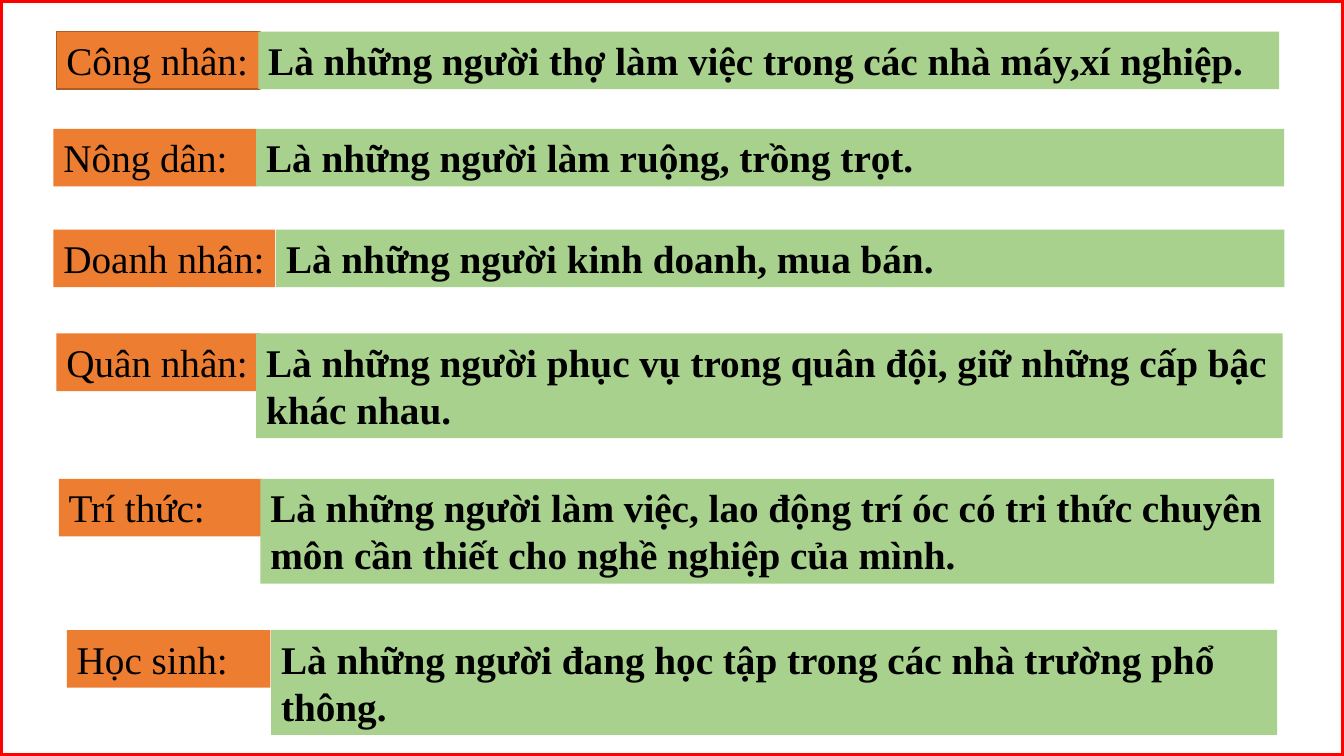
from pptx import Presentation
from pptx.dml.color import RGBColor
from pptx.enum.shapes import MSO_SHAPE
from pptx.enum.text import MSO_ANCHOR, PP_ALIGN
from pptx.util import Pt

RECT = MSO_SHAPE.RECTANGLE
TOP = MSO_ANCHOR.TOP
LEFT = PP_ALIGN.LEFT

ORANGE = RGBColor(0xED, 0x7D, 0x31)
BROWN = RGBColor(0xAF, 0x5C, 0x24)
GREEN = RGBColor(0xA9, 0xD1, 0x8E)
RED = RGBColor(0xFF, 0x00, 0x00)
BLACK = RGBColor(0x00, 0x00, 0x00)

FONT = "Times New Roman"
SLIDE_W, SLIDE_H = 960, 540
ONE_LINE = 41.2
LINE_STEP = 33.7

# Each row: left, top, label width, meaning left, right edge, line count, term, meaning
ROWS = [
    (40.3, 22.5, 145.4, 184.5, 913.7, 1, "Công nhân:",
     "Là những người thợ làm việc trong các nhà máy,xí nghiệp."),
    (38.2, 92, 145.4, 183, 917.3, 1, "Nông dân:",
     "Là những người làm ruộng, trồng trọt."),
    (38.2, 164, 158.4, 197.2, 917.5, 1, "Doanh nhân:",
     "Là những người kinh doanh, mua bán."),
    (40.3, 238.2, 145.4, 183, 916.2, 2, "Quân nhân:",
     "Là những người phục vụ trong quân đội, giữ những cấp bậc khác nhau."),
    (42, 342, 145.4, 186, 910.2, 2, "Trí thức:",
     "Là những người làm việc, lao động trí óc có tri thức chuyên\n"
     "môn cần thiết cho nghề nghiệp của mình."),
    (47.7, 450, 145.4, 193.7, 912.2, 2, "Học sinh:",
     "Là những người đang học tập trong các nhà trường phổ thông."),
]


def add_rect(s, left, top, width, height, fill=None, line=None, line_width=1):
    sp = s.shapes.add_shape(RECT, Pt(left), Pt(top), Pt(width), Pt(height))
    sp.shadow.inherit = False
    if fill is None:
        sp.fill.background()
    else:
        sp.fill.solid()
        sp.fill.fore_color.rgb = fill
    if line is None:
        sp.line.fill.background()
    else:
        sp.line.color.rgb = line
        sp.line.width = Pt(line_width)
    return sp


def set_text(sp, text, bold):
    tf = sp.text_frame
    tf.word_wrap = True
    tf.vertical_anchor = TOP
    tf.text = text
    for p in tf.paragraphs:
        p.alignment = LEFT
        p.font.name = FONT
        p.font.size = Pt(28)
        p.font.bold = bold
        p.font.color.rgb = BLACK


def add_definition(s, row, outline=None):
    left, top, label_w, text_left, right, lines, term, meaning = row
    label = add_rect(s, left, top, label_w, ONE_LINE, ORANGE, outline)
    set_text(label, term, False)
    height = ONE_LINE + (lines - 1) * LINE_STEP
    box = add_rect(s, text_left, top, right - text_left, height, GREEN)
    set_text(box, meaning, True)


def add_frame(s):
    add_rect(s, 0, 0, SLIDE_W, SLIDE_H, line=RED, line_width=4.5)


def main():
    prs = Presentation()
    prs.slide_width, prs.slide_height = Pt(SLIDE_W), Pt(SLIDE_H)
    s = prs.slides.add_slide(prs.slide_layouts[6])
    add_definition(s, ROWS[0], BROWN)
    for row in ROWS[1:]:
        add_definition(s, row)
    add_frame(s)
    prs.save("out.pptx")


if __name__ == "__main__":
    main()
